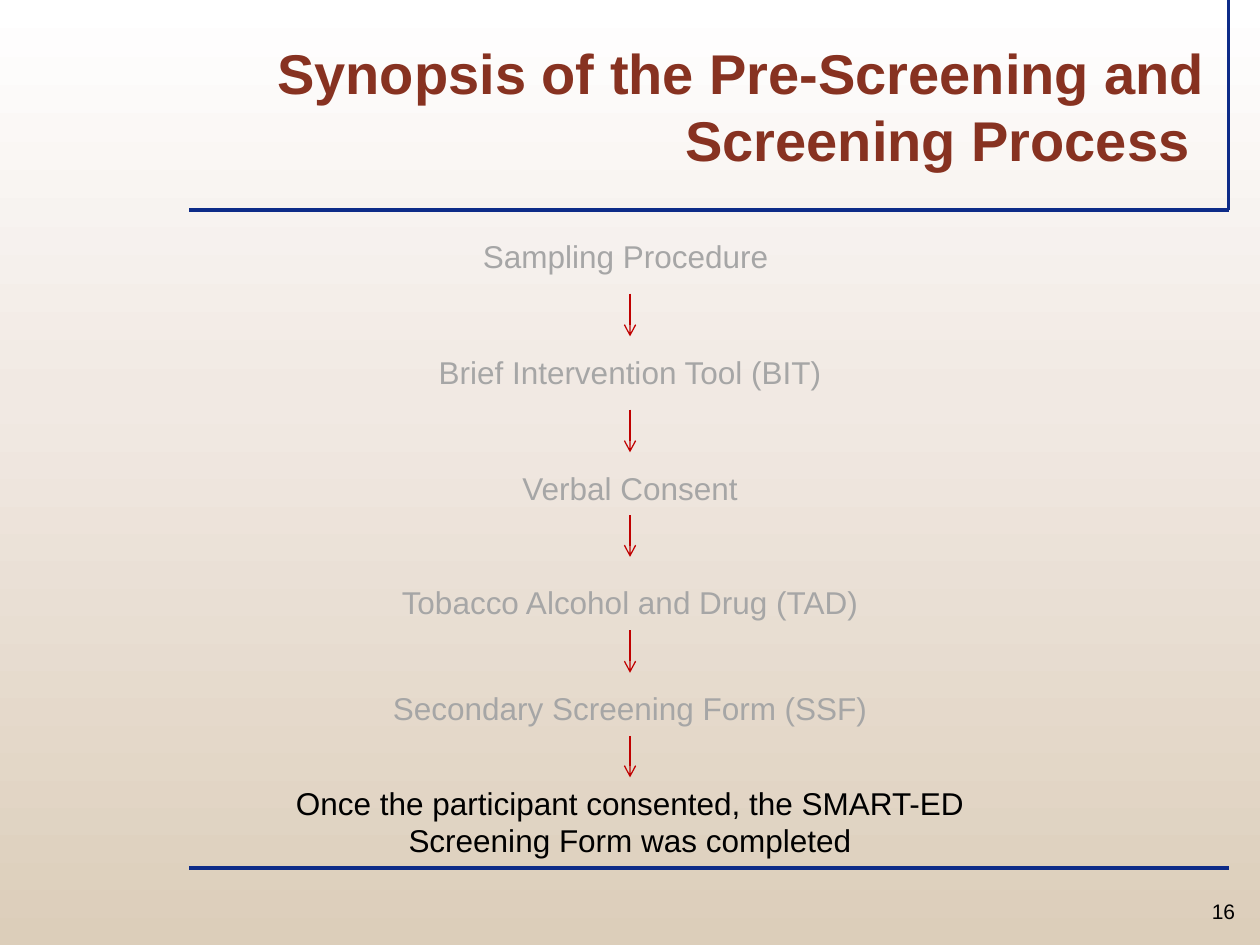
"""Build the slide on the pre-screening and screening process."""
from copy import deepcopy
from lxml.etree import SubElement
from pptx import Presentation
from pptx.dml.color import RGBColor
from pptx.enum.shapes import MSO_CONNECTOR as Link
from pptx.enum.text import MSO_ANCHOR as Anchor, PP_ALIGN as Align
from pptx.oxml.ns import qn
from pptx.util import Inches, Pt


def write(box, lines, size, color, align=Align.CENTER, bold=False):
    frame = box.text_frame
    frame.word_wrap = True
    for i, line in enumerate(lines):
        para = frame.add_paragraph() if i else frame.paragraphs[0]
        para.alignment = align
        run = para.add_run()
        run.text = line
        run.font.name = "Arial"
        run.font.size = Pt(size)
        run.font.bold = bold
        run.font.color.rgb = RGBColor.from_string(color)


def draw(x1, y1, x2, y2, color, width):
    line = slide.shapes.add_connector(
        Link.STRAIGHT, Inches(x1), Inches(y1), Inches(x2), Inches(y2))
    line.line.color.rgb = RGBColor.from_string(color)
    line.line.width = Pt(width)
    SubElement(line.element.spPr, qn("a:effectLst"))
    return line


deck = Presentation()
deck.slide_width, deck.slide_height = Inches(10), Inches(7.5)
slide = deck.slides.add_slide(deck.slide_layouts[5])

fill = slide.background.fill
fill.gradient()
fill.gradient_angle = 270
first = slide.element.find(".//" + qn("a:gs"))
first.addnext(deepcopy(first))
stops = [(0, "FFFFFF"), (0.42, "F1E9E3"), (1, "DCCEBA")]
for stop, (pos, color) in zip(fill.gradient_stops, stops):
    stop.position = pos
    stop.color.rgb = RGBColor.from_string(color)

for ends in [(9.75, 0, 9.75, 1.67), (1.5, 1.67, 9.75, 1.67),
             (1.5, 6.89, 9.75, 6.89)]:
    draw(*ends, "0D2B88", 2.25)

title = slide.shapes.title
title.left, title.top = Inches(0.5), Inches(0)
title.width, title.height = Inches(9.17), Inches(1.42)
title.text_frame.vertical_anchor = Anchor.BOTTOM
write(title, ["Synopsis of the Pre-Screening and Screening Process "],
      32, "873221", Align.RIGHT, True)

steps = [
    (["Sampling Procedure "], 1.83, 2.58, 0.42, "A6A6A6"),
    (["Brief Intervention Tool (BIT)"], 2.75, 3.5, 0.4, "A6A6A6"),
    (["Verbal Consent"], 3.67, 2.25, 0.42, "A6A6A6"),
    (["Tobacco Alcohol and Drug (TAD)"], 4.58, 4, 0.42, "A6A6A6"),
    (["Secondary Screening Form (SSF)"], 5.42, 4.25, 0.42, "A6A6A6"),
    (["Once the participant consented, the SMART-ED",
      "Screening Form was completed"], 6.17, 8.83, 0.71, "000000"),
]
boxes = []
for lines, top, wide, high, color in steps:
    box = slide.shapes.add_textbox(
        Inches(5 - wide / 2), Inches(top), Inches(wide), Inches(high))
    write(box, lines, 18, color)
    boxes.append(box)

for i, top in enumerate([2.33, 3.25, 4.08, 5, 5.83]):
    arrow = draw(5, top, 5, top + 0.34, "C00000", 0.75)
    SubElement(arrow.line._get_or_add_ln(), qn("a:tailEnd"), type="arrow")
    if i >= 2:
        arrow.begin_connect(boxes[i], 2)
    if i == 4:
        arrow.end_connect(boxes[5], 0)

page = slide.shapes.add_textbox(
    Inches(9.42), Inches(7.08), Inches(0.58), Inches(0.3))
write(page, ["16"], 12, "000000")

deck.save("out.pptx")
